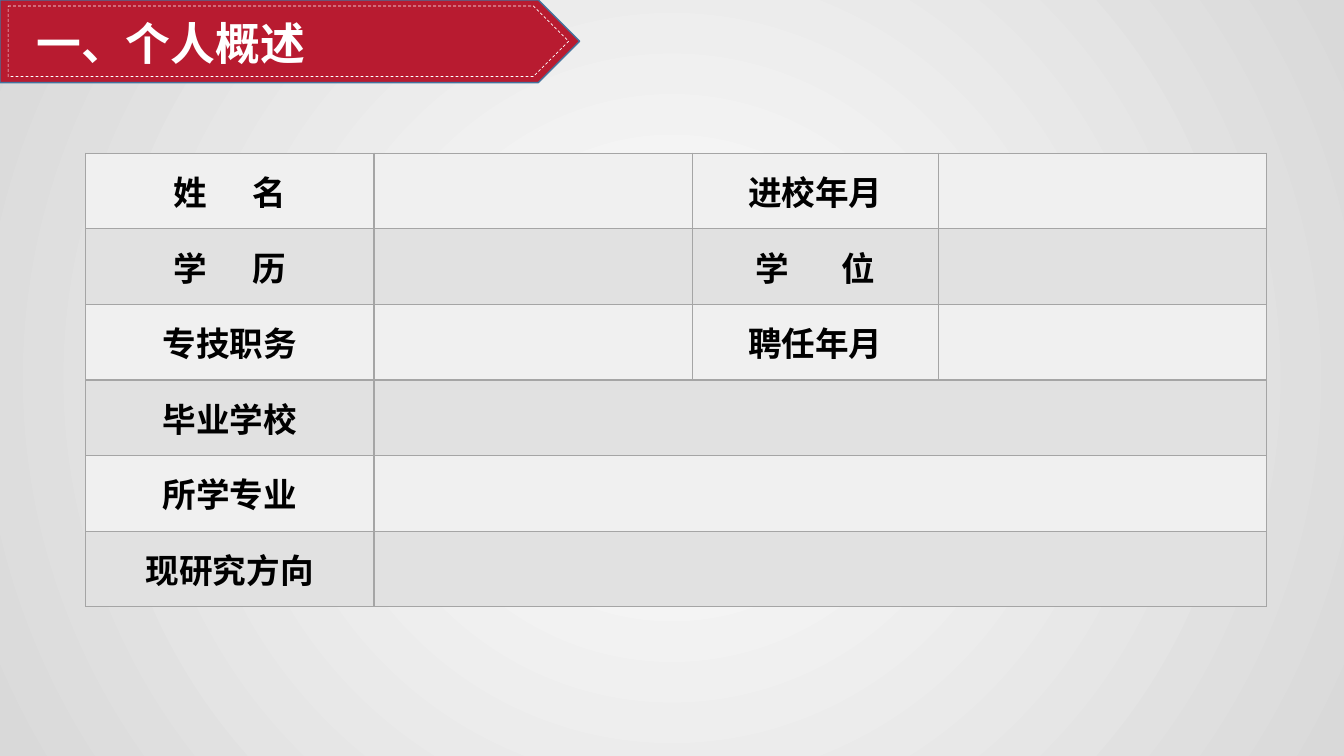
import pptx
import pptx.dml.color
import pptx.enum.dml
import pptx.enum.shapes
import pptx.enum.text
import pptx.oxml
import pptx.oxml.ns
import pptx.util
import lxml.etree

Pt = pptx.util.Pt
RGBColor = pptx.dml.color.RGBColor

WHITE = RGBColor(0xFF, 0xFF, 0xFF)
BLACK = RGBColor(0x00, 0x00, 0x00)
EDGE_GREY = RGBColor(0xD9, 0xD9, 0xD9)
BANNER_RED = RGBColor(0xB8, 0x1B, 0x30)
BANNER_LINE = RGBColor(0x43, 0x73, 0x9E)
ROW_FILLS = (RGBColor(0xF0, 0xF0, 0xF0), RGBColor(0xE1, 0xE1, 0xE1))
BORDER_GREY = RGBColor(0xA5, 0xA5, 0xA5)

FONT = "Noto Sans CJK SC"
COLUMN_WIDTHS = (205.9, 227.5, 175.7, 234.7)
ROW_HEIGHT = 54

# Each label is (text, extra width of its gap); one label means a wide answer cell
ROWS = (
    (("姓 名", 27), ("进校年月", 0)),
    (("学 历", 27), ("学 位", 32.4)),
    (("专技职务", 0), ("聘任年月", 0)),
    (("毕业学校", 0),),
    (("所学专业", 0),),
    (("现研究方向", 0),),
)


def add_run(paragraph, text, size, color):
    run = paragraph.add_run()
    run.text = text
    run.font.name = FONT
    run.font.size = Pt(size)
    run.font.bold = True
    run.font.color.rgb = color
    properties = run.font._element
    east_asian = lxml.etree.SubElement(properties, pptx.oxml.ns.qn("a:ea"))
    east_asian.set("typeface", FONT)
    return run


def paint_background(slide):
    fill = slide.background.fill
    fill.gradient()
    for stop, color, position in zip(fill.gradient_stops, (WHITE, EDGE_GREY), (0, 1)):
        stop.color.rgb = color
        stop.position = position
    # Radial spread from the centre
    gradient = slide.element.xpath(".//p:bg//a:gradFill")[0]
    for linear in gradient.xpath("./a:lin"):
        gradient.remove(linear)
    gradient.append(pptx.oxml.parse_xml(
        f'<a:path {pptx.oxml.ns.nsdecls("a")} path="circle">'
        '<a:fillToRect l="50000" t="50000" r="50000" b="50000"/></a:path>'))


def add_plate(shapes, left, top, width, height):
    plate = shapes.add_shape(pptx.enum.shapes.MSO_SHAPE.PENTAGON,
                             Pt(left), Pt(top), Pt(width), Pt(height))
    plate.shadow.inherit = False
    return plate


def add_banner(slide, text, left, top, width, height):
    # Red arrow plate with a dashed inner outline
    group = slide.shapes.add_group_shape()
    outer = add_plate(group.shapes, left, top, width, height)
    outer.fill.solid()
    outer.fill.fore_color.rgb = BANNER_RED
    outer.line.color.rgb = BANNER_LINE
    outer.line.width = Pt(1)

    inner = add_plate(group.shapes, left + 5.8, top + 4.3, width - 13.6, height - 8.6)
    inner.fill.background()
    inner.line.color.rgb = WHITE
    inner.line.width = Pt(0.5)
    inner.line.dash_style = pptx.enum.dml.MSO_LINE.DASH

    # Title, raised above the plate
    title = slide.shapes.title
    slide.shapes.element.append(title.element)
    title.left, title.top = Pt(left + 18.7), Pt(top + 7.2)
    title.width, title.height = Pt(309.6), Pt(46)
    frame = title.text_frame
    frame.auto_size = pptx.enum.text.MSO_AUTO_SIZE.NONE
    frame.word_wrap = True
    frame.vertical_anchor = pptx.enum.text.MSO_ANCHOR.MIDDLE
    paragraph = frame.paragraphs[0]
    paragraph.alignment = pptx.enum.text.PP_ALIGN.LEFT
    paragraph.line_spacing = 1.0
    add_run(paragraph, text, 32, WHITE)


def style_cell(cell, fill_color):
    properties = cell._tc.get_or_add_tcPr()
    for side in ("lnL", "lnR", "lnT", "lnB"):
        properties.append(pptx.oxml.parse_xml(
            f'<a:{side} {pptx.oxml.ns.nsdecls("a")} w="{Pt(1)}"><a:solidFill>'
            f'<a:srgbClr val="{BORDER_GREY}"/></a:solidFill></a:{side}>'))
    cell.fill.solid()
    cell.fill.fore_color.rgb = fill_color
    cell.vertical_anchor = pptx.enum.text.MSO_ANCHOR.MIDDLE


def write_label(cell, text, gap):
    paragraph = cell.text_frame.paragraphs[0]
    paragraph.alignment = pptx.enum.text.PP_ALIGN.CENTER
    first, space, last = text.partition(" ")
    add_run(paragraph, first, 24, BLACK)
    if space:
        # Letter spacing widens the gap between the two characters
        spacer = add_run(paragraph, space, 24, BLACK)
        spacer.font._element.set("spc", str(round(gap * 100)))
        add_run(paragraph, last, 24, BLACK)


def add_profile_table(slide, left, top):
    frame = slide.shapes.add_table(len(ROWS), len(COLUMN_WIDTHS), Pt(left), Pt(top),
                                   Pt(sum(COLUMN_WIDTHS)), Pt(ROW_HEIGHT * len(ROWS)))
    table = frame.table
    table.first_row = False
    table.horz_banding = False
    for column, width in zip(table.columns, COLUMN_WIDTHS):
        column.width = Pt(width)

    for row_index, labels in enumerate(ROWS):
        table.rows[row_index].height = Pt(ROW_HEIGHT)
        for cell in table.rows[row_index].cells:
            style_cell(cell, ROW_FILLS[row_index % 2])
        for label_index, (text, gap) in enumerate(labels):
            write_label(table.cell(row_index, label_index * 2), text, gap)
        if len(labels) == 1:
            table.cell(row_index, 1).merge(table.cell(row_index, 3))


def main():
    presentation = pptx.Presentation()
    presentation.slide_width, presentation.slide_height = Pt(960), Pt(540)
    slide = presentation.slides.add_slide(presentation.slide_layouts[5])
    paint_background(slide)
    add_banner(slide, "一、个人概述", 0, 0, 414, 59)
    add_profile_table(slide, 61.2, 109.4)
    presentation.save("out.pptx")


if __name__ == "__main__":
    main()
